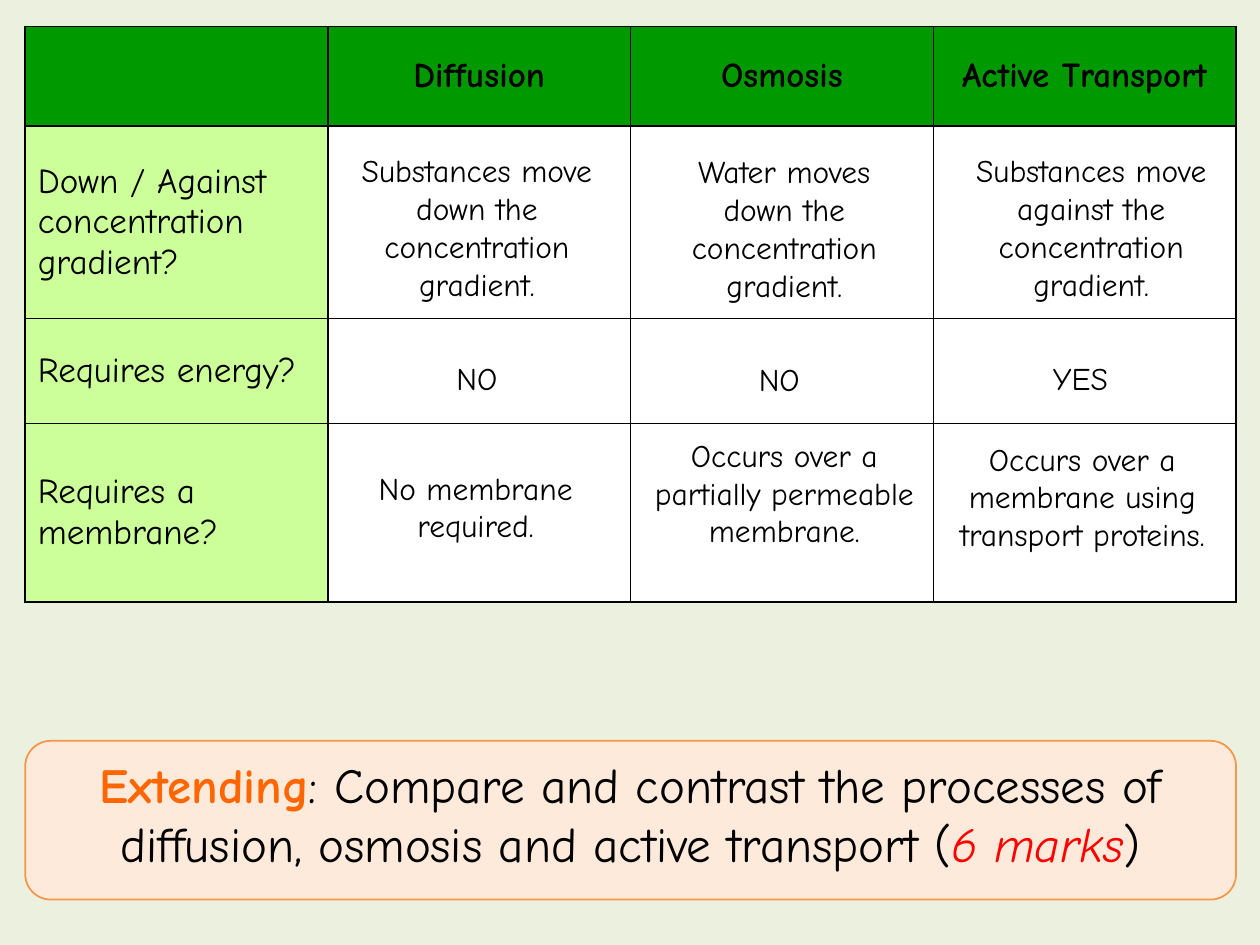
from lxml.etree import SubElement
from pptx import Presentation
from pptx.dml.color import RGBColor
from pptx.enum.shapes import MSO_SHAPE
from pptx.enum.text import MSO_ANCHOR, MSO_AUTO_SIZE, PP_ALIGN
from pptx.oxml.ns import qn
from pptx.util import Inches, Pt

FONT = "Comic Neue"
BLACK, WHITE = "000000", "FFFFFF"
HEADER_GREEN, LABEL_GREEN = "009900", "CCFF99"
LEFT, WIDTH = 0.2, 9.61

PROCESSES = ["", "Diffusion", "Osmosis", "Active Transport"]
QUESTIONS = ["Down / Against concentration gradient?", "Requires energy?",
             "Requires a membrane?"]
ROW_HEIGHTS = [0.79, 1.53, 0.83, 1.42]
ANSWERS = [
    ("Substances move down the concentration gradient.", 2.72, 1.15, 2.13, 1.31),
    ("Water moves down the concentration gradient.", 5.16, 1.16, 2.13, 1.31),
    ("Substances move against the concentration gradient.", 7.52, 1.15, 2.28, 1.31),
    ("NO", 2.72, 2.8, 2.13, 0.4),
    ("NO", 5.12, 2.81, 2.13, 0.4),
    ("YES", 7.51, 2.8, 2.13, 0.4),
    ("No membrane required.", 2.71, 3.67, 2.13, 0.71),
    ("Occurs over a membrane using transport proteins.", 7.49, 3.44, 2.2, 1.31),
    ("Occurs over a partially permeable membrane.", 5.08, 3.41, 2.29, 1.31),
]
TASK = [
    ("Extending", "FF6600", True, False),
    (": Compare and contrast the processes of diffusion, osmosis and active "
     "transport (", BLACK, False, False),
    ("6 marks", "FF0000", False, True),
    (")", BLACK, False, False),
]


def paint(target, color):
    target.solid()
    target.fore_color.rgb = RGBColor.from_string(color)


def style(font, size, color=BLACK, bold=False, italic=False):
    font.name, font.size, font.bold, font.italic = FONT, Pt(size), bold, italic
    font.color.rgb = RGBColor.from_string(color)


def border(cell):
    props = cell._tc.get_or_add_tcPr()
    for index, side in enumerate(("lnL", "lnR", "lnT", "lnB")):
        line = SubElement(props, qn(f"a:{side}"), w=str(Pt(1)))
        fill = SubElement(line, qn("a:solidFill"))
        SubElement(fill, qn("a:srgbClr"), val=BLACK)
        props.insert(index, line)


def add_comparison(slide):
    rows, cols = len(ROW_HEIGHTS), len(PROCESSES)
    table = slide.shapes.add_table(
        rows, cols, Inches(LEFT), Inches(0.21), Inches(WIDTH),
        Inches(sum(ROW_HEIGHTS))).table
    for column in table.columns:
        column.width = Inches(WIDTH / cols)
    for r, height in enumerate(ROW_HEIGHTS):
        table.rows[r].height = Inches(height)
        for c in range(cols):
            cell = table.cell(r, c)
            header = r == 0
            paint(cell.fill, HEADER_GREEN if header else WHITE if c else LABEL_GREEN)
            border(cell)
            cell.vertical_anchor = MSO_ANCHOR.MIDDLE
            label = PROCESSES[c] if header else "" if c else QUESTIONS[r - 1]
            if label:
                cell.text = label
                paragraph = cell.text_frame.paragraphs[0]
                paragraph.alignment = PP_ALIGN.CENTER if header else PP_ALIGN.LEFT
                style(paragraph.font, 20, bold=header)


def add_answer(slide, answer, *box):
    frame = slide.shapes.add_textbox(*map(Inches, box)).text_frame
    frame.word_wrap = True
    frame.auto_size = MSO_AUTO_SIZE.SHAPE_TO_FIT_TEXT
    frame.text = answer
    paragraph = frame.paragraphs[0]
    paragraph.alignment = PP_ALIGN.CENTER
    style(paragraph.font, 18)


def add_task(slide):
    panel = slide.shapes.add_shape(
        MSO_SHAPE.ROUNDED_RECTANGLE, Inches(LEFT), Inches(5.88),
        Inches(WIDTH), Inches(1.26))
    panel.adjustments[0] = 0.16
    panel.shadow.inherit = False
    paint(panel.fill, "FDEADA")
    paint(panel.line.fill, "F79646")
    panel.line.width = Pt(1)
    frame = panel.text_frame
    frame.word_wrap = True
    frame.vertical_anchor = MSO_ANCHOR.TOP
    paragraph = frame.paragraphs[0]
    paragraph.alignment = PP_ALIGN.CENTER
    for words, color, bold, italic in TASK:
        run = paragraph.add_run()
        run.text = words
        style(run.font, 28, color, bold, italic)


def main():
    """Build the slide comparing diffusion, osmosis and active transport."""
    deck = Presentation()
    deck.slide_width, deck.slide_height = Inches(10), Inches(7.5)
    slide = deck.slides.add_slide(deck.slide_layouts[6])
    paint(slide.background.fill, "EBF1DE")
    add_comparison(slide)
    for answer in ANSWERS:
        add_answer(slide, *answer)
    add_task(slide)
    deck.save("out.pptx")


if __name__ == "__main__":
    main()
